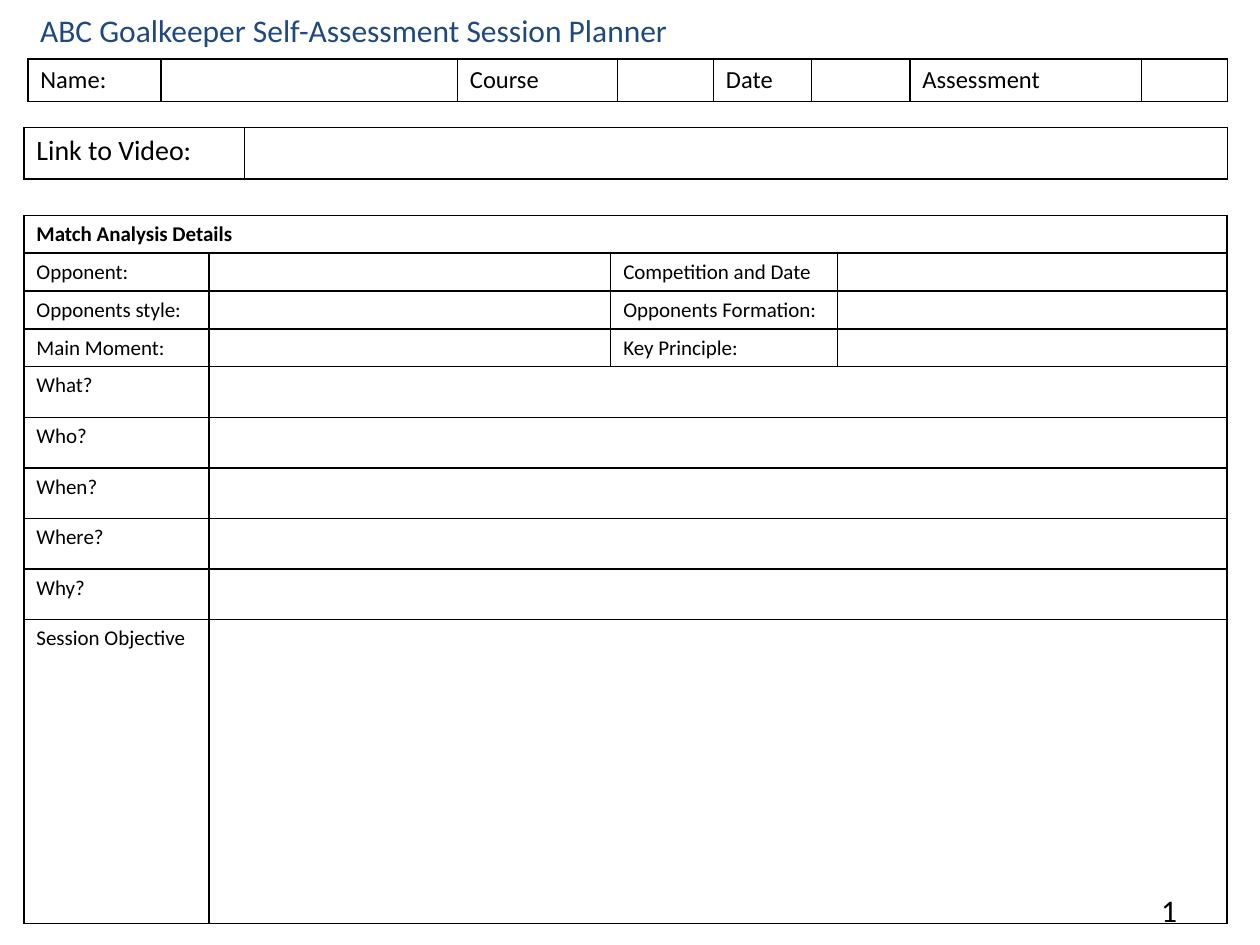
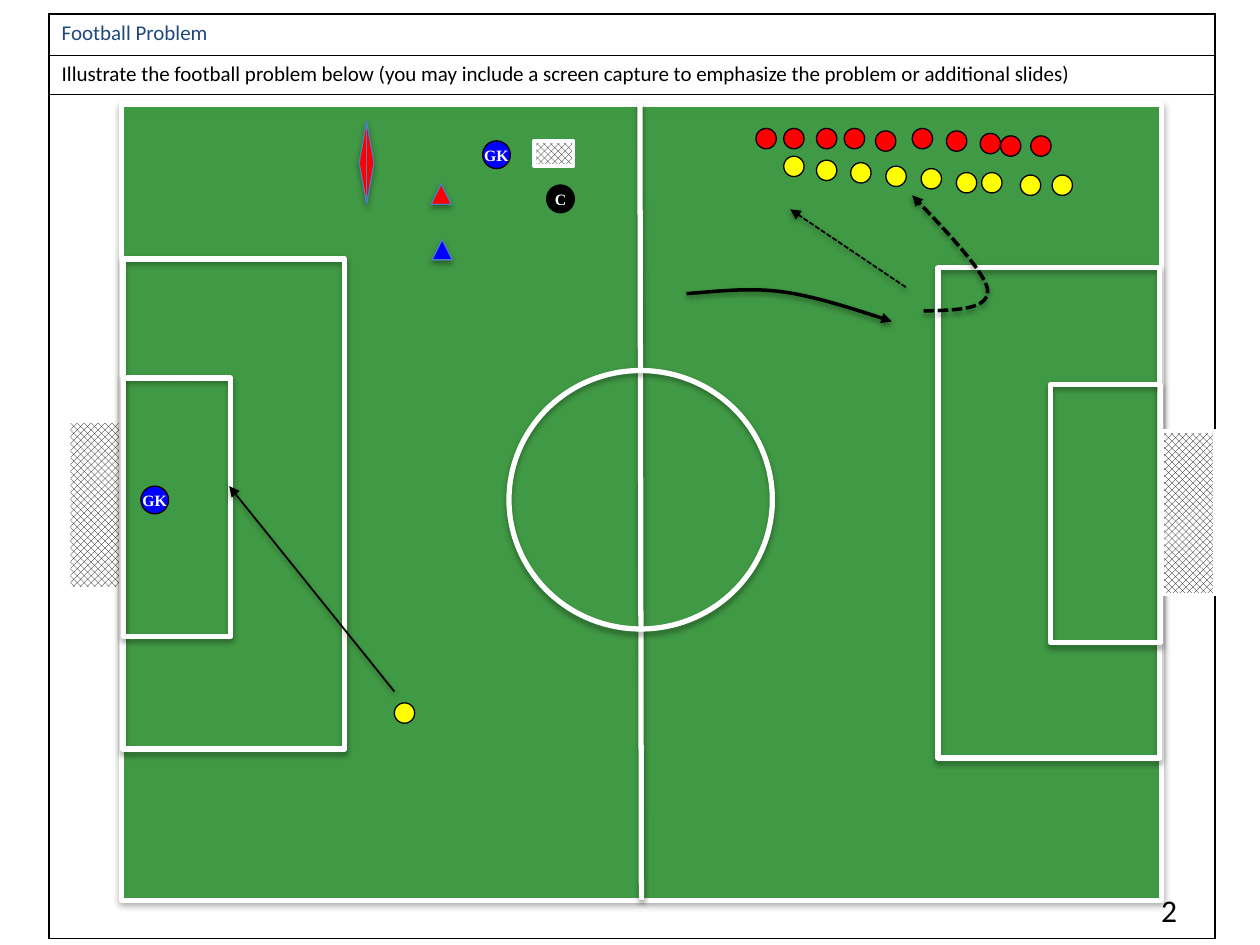
from dataclasses import dataclass

from lxml.etree import SubElement
from pptx import Presentation
from pptx.dml.color import RGBColor
from pptx.enum.dml import MSO_LINE, MSO_PATTERN
from pptx.enum.shapes import MSO_CONNECTOR, MSO_SHAPE
from pptx.enum.text import MSO_ANCHOR, MSO_AUTO_SIZE, PP_ALIGN
from pptx.oxml.ns import qn
from pptx.util import Cm, Pt


@dataclass(frozen=True)
class Theme:
    black: str = "000000"
    white: str = "FFFFFF"
    heading: str = "1F497D"
    grass: str = "178E1C"
    red: str = "FF0000"
    yellow: str = "FFFF00"
    blue: str = "0000FF"
    cone_edge: str = "4B7EBC"
    font: str = "Calibri"
    marker_font: str = "Times New Roman"
    title: int = 18
    link: int = 16
    field: int = 14
    body: int = 12
    marker: int = 9
    player_size: float = 0.41
    marker_size: float = 0.56


THEME = Theme()
NET = "net"


def rgb(color):
    return RGBColor.from_string(color)


def put_text(tf, text, size=THEME.body, color=THEME.black, font=THEME.font,
             bold=False, align=PP_ALIGN.LEFT):
    p = tf.paragraphs[0]
    p.alignment = align
    if not text:
        SubElement(p._p, qn("a:endParaRPr"), sz=str(size * 100))
        return
    r = p.add_run()
    r.text = text
    r.font.size = Pt(size)
    r.font.name = font
    r.font.bold = bold
    r.font.color.rgb = rgb(color)


class Deck:
    def __init__(self, theme):
        self.theme = theme
        self.prs = Presentation()
        self.prs.slide_width = Cm(25.4)
        self.prs.slide_height = Cm(19.05)
        self.slide = None

    def new_slide(self):
        self.slide = self.prs.slides.add_slide(self.prs.slide_layouts[6])

    def text(self, x, y, w, h, text, **fmt):
        tf = self.slide.shapes.add_textbox(Cm(x), Cm(y), Cm(w), Cm(h)).text_frame
        tf.word_wrap = True
        tf.auto_size = MSO_AUTO_SIZE.SHAPE_TO_FIT_TEXT
        put_text(tf, text, **fmt)

    def page_number(self):
        number = len(self.prs.slides)
        self.text(23.16, 17.83, 1.02, 1.02, str(number), size=self.theme.title)

    def table(self, x, y, cols, heights, rows, filled=False, head=None, **fmt):
        frame = self.slide.shapes.add_table(
            len(rows), len(cols), Cm(x), Cm(y), Cm(sum(cols)), Cm(sum(heights)))
        tbl = frame.table
        tbl.first_row = tbl.horz_banding = False
        for col, width in zip(tbl.columns, cols):
            col.width = Cm(width)
        for i, (labels, height) in enumerate(zip(rows, heights)):
            tbl.rows[i].height = Cm(height)
            row_fmt = {**fmt, **(head or {})} if i == 0 else fmt
            for j in range(len(cols)):
                cell = tbl.cell(i, j)
                self.style_cell(cell, filled)
                put_text(cell.text_frame, labels[j] if j < len(labels) else "", **row_fmt)
            if len(labels) < len(cols):
                tbl.cell(i, len(labels) - 1).merge(tbl.cell(i, len(cols) - 1))

    def style_cell(self, cell, filled):
        tcPr = cell._tc.get_or_add_tcPr()
        for side in ("lnL", "lnR", "lnT", "lnB"):
            ln = SubElement(tcPr, qn(f"a:{side}"), w=str(Pt(1)))
            solid = SubElement(ln, qn("a:solidFill"))
            SubElement(solid, qn("a:srgbClr"), val=self.theme.black)
        if filled:
            cell.fill.solid()
            cell.fill.fore_color.rgb = rgb(self.theme.white)
        else:
            cell.fill.background()

    def outline(self, s, color, width, dash=False, arrow=False, shadow=None):
        if color:
            s.line.color.rgb = rgb(color)
            s.line.width = Pt(width)
        else:
            s.line.fill.background()
        if dash:
            s.line.dash_style = MSO_LINE.SQUARE_DOT
        if arrow:
            SubElement(s.line._get_or_add_ln(), qn("a:tailEnd"), type="triangle")
        effects = SubElement(s._element.spPr, qn("a:effectLst"))
        if shadow:
            opacity, distance = shadow
            outer = SubElement(effects, qn("a:outerShdw"), blurRad="40000",
                               dist=str(distance), dir="5400000", rotWithShape="0")
            clr = SubElement(outer, qn("a:srgbClr"), val=self.theme.black)
            SubElement(clr, qn("a:alpha"), val=str(opacity * 1000))

    def shape(self, kind, x, y, w, h, fill=None, line=None, width=0.75,
              turned=False, opacity=100, shadow=False):
        if turned:
            x, y, w, h = x + (w - h) / 2, y + (h - w) / 2, h, w
        s = self.slide.shapes.add_shape(kind, Cm(x), Cm(y), Cm(w), Cm(h))
        s.rotation = 90 if turned else 0
        if fill == NET:
            s.fill.patterned()
            s.fill.pattern = MSO_PATTERN.OUTLINED_DIAMOND
            s.fill.fore_color.rgb = rgb(self.theme.black)
            s.fill.back_color.rgb = rgb(self.theme.white)
        elif fill:
            s.fill.solid()
            s.fill.fore_color.rgb = rgb(fill)
            if opacity < 100:
                clr = s._element.spPr.find(qn("a:solidFill"))[0]
                SubElement(clr, qn("a:alpha"), val=str(opacity * 1000))
        else:
            s.fill.background()
        self.outline(s, line, width, shadow=(35, 23000) if shadow else None)
        return s

    def marking(self, kind, x, y, w, h, **look):
        self.shape(kind, x, y, w, h, line=self.theme.white, width=3,
                   turned=True, shadow=True, **look)

    def player(self, x, y, color):
        size = self.theme.player_size
        self.shape(MSO_SHAPE.OVAL, x, y, size, size, color, self.theme.black)

    def marker(self, x, y, label, color):
        t = self.theme
        s = self.shape(MSO_SHAPE.OVAL, x, y, t.marker_size, t.marker_size, color, t.black)
        tf = s.text_frame
        tf.word_wrap = False
        tf.vertical_anchor = MSO_ANCHOR.MIDDLE
        put_text(tf, label, size=t.marker, color=t.white, font=t.marker_font,
                 bold=True, align=PP_ALIGN.CENTER)

    def line(self, start, end, color, width, **look):
        points = [Cm(v) for v in (*start, *end)]
        s = self.slide.shapes.add_connector(MSO_CONNECTOR.STRAIGHT, *points)
        self.outline(s, color, width, shadow=(38, 20000), **look)

    def curve(self, points, **look):
        start, *rest = [(Cm(x), Cm(y)) for x, y in points]
        builder = self.slide.shapes.build_freeform(*start)
        builder.add_line_segments(rest, close=False)
        s = builder.convert_to_shape()
        segments = s._element.xpath(".//a:lnTo")
        for i in range(0, len(segments), 3):
            first, *others = segments[i:i + 3]
            first.tag = qn("a:cubicBezTo")
            for other in others:
                first.append(other[0])
                other.getparent().remove(other)
        s.fill.background()
        self.outline(s, self.theme.black, 2, arrow=True, shadow=(38, 20000), **look)


def planner_slide(deck):
    t = deck.theme
    deck.new_slide()
    deck.table(0.56, 1.19, [2.69, 5.97, 3.23, 1.93, 1.98, 1.98, 4.67, 1.73], [0.84],
               [["Name:", "", "Course", "", "Date", "", "Assessment", ""]], size=t.field)
    deck.text(0.56, 0.1, 14.58, 1.02, "ABC Goalkeeper Self-Assessment Session Planner",
              size=t.title, color=t.heading)
    questions = ["What?", "Who?", "When?", "Where?", "Why?"]
    rows = [
        ["Match Analysis Details"],
        ["Opponent:", "", "Competition and Date", ""],
        ["Opponents style:", "", "Opponents Formation:", ""],
        ["Main Moment:", "", "Key Principle:", ""],
        *[[question, ""] for question in questions],
        ["Session Objective", ""],
    ]
    heights = [0.76] * 4 + [1.02] * len(questions) + [6.12]
    deck.table(0.48, 4.34, [3.73, 8.1, 4.57, 7.85], heights, rows,
               filled=True, head={"bold": True})
    deck.page_number()
    deck.table(0.48, 2.57, [4.45, 19.81], [1.04], [["Link to Video:", ""]], size=t.link)


def draw_pitch(deck):
    t = deck.theme
    rect = MSO_SHAPE.RECTANGLE
    deck.shape(rect, 1.42, 8.53, 1.07, 3.3, NET, turned=True)
    deck.marking(rect, 2.45, 2.1, 20.96, 16.05, fill=t.grass, opacity=75)
    deck.marking(rect, 2.48, 5.22, 4.47, 9.88)
    deck.marking(rect, 2.49, 7.62, 2.16, 5.21)
    deck.line((12.9, 2.08), (12.93, 18.14), t.white, 3)
    deck.marking(MSO_SHAPE.OVAL, 10.26, 7.47, 5.31, 5.21)
    deck.marking(rect, 18.91, 5.4, 4.47, 9.88)
    deck.marking(rect, 21.18, 7.75, 2.21, 5.21)
    deck.shape(rect, 23.42, 8.69, 1.07, 3.3, NET, t.white, 2, turned=True)


def draw_players(deck):
    t = deck.theme
    reds = [(15.24, 2.59), (15.8, 2.59), (16.46, 2.59), (17.02, 2.59), (17.65, 2.64),
            (18.39, 2.59), (19.08, 2.64), (19.76, 2.69), (20.17, 2.74), (20.78, 2.74)]
    yellows = [(7.95, 14.17), (15.8, 3.15), (16.46, 3.23), (17.15, 3.28), (17.86, 3.35),
               (18.57, 3.4), (19.28, 3.48), (19.79, 3.48), (20.57, 3.53), (21.21, 3.53)]
    for team, color in ((reds, t.red), (yellows, t.yellow)):
        for x, y in team:
            deck.player(x, y, color)
    for x, y, label, color in ((2.84, 9.8, "GK", t.blue), (9.73, 2.84, "GK", t.blue),
                               (11.02, 3.73, "C", t.black)):
        deck.marker(x, y, label, color)


def draw_equipment(deck):
    t = deck.theme
    deck.shape(MSO_SHAPE.RECTANGLE, 10.77, 2.84, 0.79, 0.51, NET, t.white, 2)
    deck.shape(MSO_SHAPE.FLOWCHART_SORT, 7.24, 2.44, 0.3, 1.68, t.red, t.cone_edge,
               turned=True, shadow=True)
    for x, y, color in ((8.69, 3.71, t.red), (8.71, 4.83, t.blue)):
        deck.shape(MSO_SHAPE.ISOSCELES_TRIANGLE, x, y, t.player_size, t.player_size,
                   color, t.cone_edge, shadow=True)


def draw_movements(deck):
    black = deck.theme.black
    deck.line((7.95, 13.94), (4.62, 9.8), black, 1, arrow=True)
    deck.line((18.26, 5.79), (15.93, 4.22), black, 1, arrow=True, dash=True)
    deck.curve([(18.62, 6.27), (19.28, 6.25), (19.94, 6.25), (19.91, 5.84),
                (19.86, 5.46), (18.39, 3.94), (18.39, 3.94)], dash=True)
    deck.curve([(13.84, 5.92), (14.5, 5.87), (15.14, 5.79), (15.82, 5.89),
                (16.51, 5.99), (17.98, 6.48), (17.98, 6.48)])


def problem_slide(deck):
    deck.new_slide()
    prompt = ("Illustrate the football problem below (you may include a screen capture "
              "to emphasize the problem or additional slides)")
    deck.table(0.99, 0.28, [23.5], [0.84, 0.79, 17.01],
               [["Football Problem"], [prompt], [""]],
               filled=True, head={"color": deck.theme.heading})
    deck.page_number()
    draw_pitch(deck)
    draw_players(deck)
    draw_equipment(deck)
    draw_movements(deck)


def main():
    deck = Deck(THEME)
    planner_slide(deck)
    problem_slide(deck)
    deck.prs.save("out.pptx")


if __name__ == "__main__":
    main()
